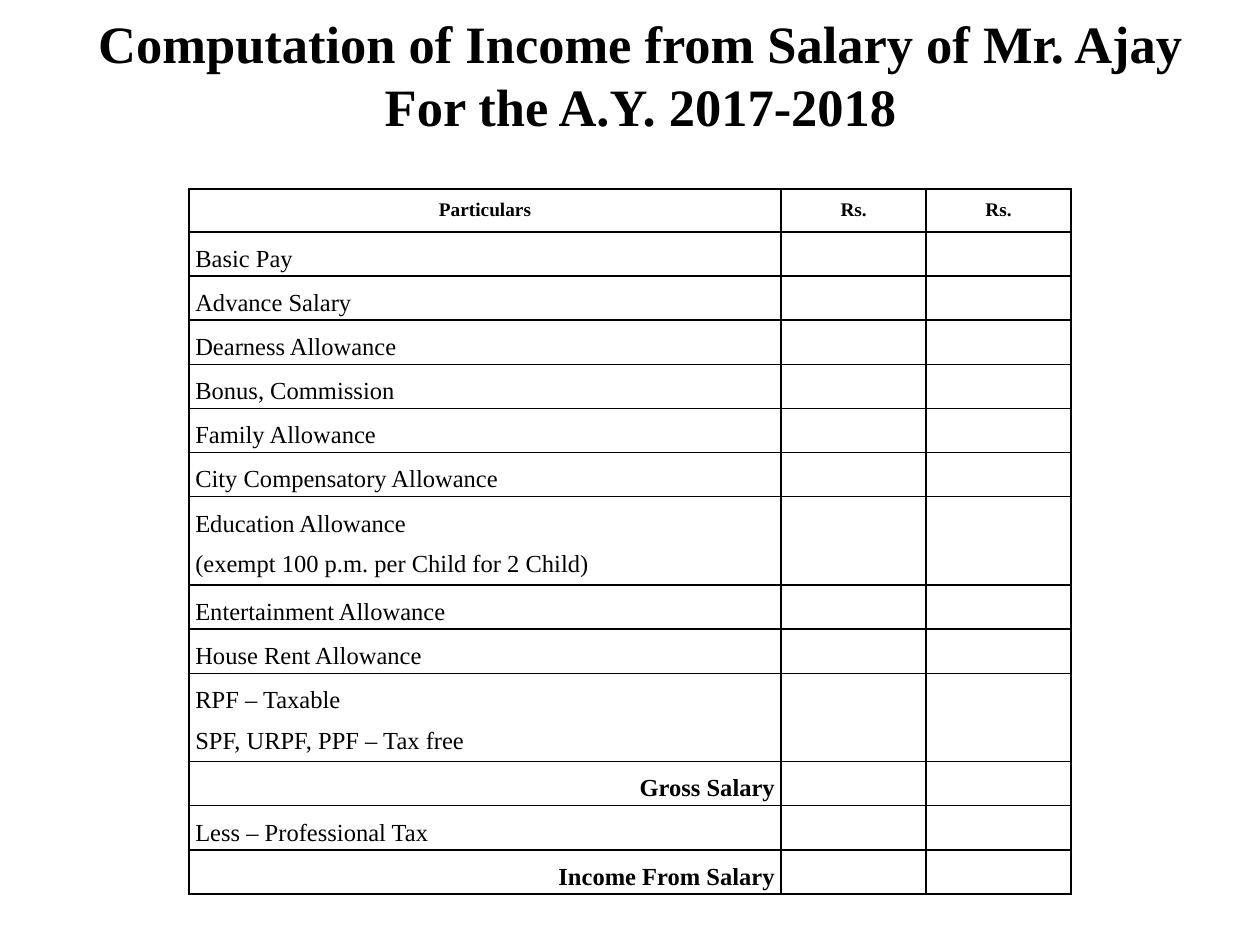
from pptx import Presentation
from pptx.dml.color import RGBColor
from pptx.enum.text import MSO_ANCHOR, PP_ALIGN
from pptx.oxml import parse_xml
from pptx.oxml.ns import nsdecls
from pptx.util import Inches, Pt

LEFT, CENTER, RIGHT = PP_ALIGN.LEFT, PP_ALIGN.CENTER, PP_ALIGN.RIGHT
TOP = MSO_ANCHOR.TOP
FONT = "Times New Roman"
BLACK = "000000"
ROW_HEIGHT = 0.34
TITLE = "Computation of Income from Salary of Mr. Ajay\nFor the A.Y. 2017-2018"
HEADERS = ["Particulars", "Rs.", "Rs."]
PARTICULARS = [
    "Basic Pay",
    "Advance Salary",
    "Dearness Allowance",
    "Bonus, Commission",
    "Family Allowance",
    "City Compensatory Allowance",
    "Education Allowance\n(exempt 100 p.m. per Child for 2 Child)",
    "Entertainment Allowance",
    "House Rent Allowance",
    "RPF – Taxable\nSPF, URPF, PPF – Tax free",
    "Gross Salary",
    "Less – Professional Tax",
    "Income From Salary",
]
TOTALS = {"Gross Salary", "Income From Salary"}


def color(value):
    return RGBColor.from_string(value)


def write(tf, text, size=14, bold=False, align=LEFT, spacing=1.5):
    for i, line in enumerate(text.split("\n")):
        p = tf.paragraphs[0] if i == 0 else tf.add_paragraph()
        p.alignment = align
        p.line_spacing = spacing
        r = p.add_run()
        r.text = line
        r.font.name = FONT
        r.font.size = Pt(size)
        r.font.bold = bold
        r.font.color.rgb = color(BLACK)


class Deck:
    def __init__(self, width, height):
        self.prs = Presentation()
        self.prs.slide_width = Inches(width)
        self.prs.slide_height = Inches(height)
        self.s = self.prs.slides.add_slide(self.prs.slide_layouts[6])

    def box(self, x, y, w, h):
        width, height = self.prs.slide_width, self.prs.slide_height
        return int(x * width), int(y * height), int(w * width), int(h * height)

    def title(self, text, *shares):
        tf = self.s.shapes.add_textbox(*self.box(*shares)).text_frame
        tf.word_wrap = True
        tf.vertical_anchor = TOP
        tf.margin_top = Inches(0.16)
        write(tf, text, size=30, bold=True, align=CENTER, spacing=Pt(36))

    def cell(self, cell, text="", **style):
        cell.margin_left = cell.margin_right = Inches(0.05)
        cell.margin_top = cell.margin_bottom = 0
        tc_pr = cell._tc.get_or_add_tcPr()
        for side in ("lnL", "lnR", "lnT", "lnB"):
            tc_pr.append(parse_xml(
                f'<a:{side} {nsdecls("a")} w="{Pt(1)}"><a:solidFill>'
                f'<a:srgbClr val="{BLACK}"/></a:solidFill></a:{side}>'))
        cell.fill.background()
        if text:
            write(cell.text_frame, text, **style)

    def table(self, headers, items, columns, *shares):
        frame = self.s.shapes.add_table(
            len(items) + 1, len(headers), *self.box(*shares))
        table = frame.table
        table.first_row = table.horz_banding = False
        for column, width in zip(table.columns, columns):
            column.width = Inches(width)
        for row, text in zip(table.rows, [headers[0], *items]):
            row.height = Inches(ROW_HEIGHT * (text.count("\n") + 1))
        for c, text in enumerate(headers):
            self.cell(table.cell(0, c), text, size=11, bold=True, align=CENTER)
        for r, text in enumerate(items, 1):
            total = text in TOTALS
            self.cell(table.cell(r, 0), text, bold=total,
                      align=RIGHT if total else LEFT)
            for c in range(1, len(headers)):
                self.cell(table.cell(r, c))


def main():
    deck = Deck(10, 7.5)
    deck.title(TITLE, 0.067, -0.01, 0.883, 0.244)
    deck.table(HEADERS, PARTICULARS, [4.7, 1.15, 1.15], 0.15, 0.2, 0.7, 0.73)
    deck.prs.save("out.pptx")


if __name__ == "__main__":
    main()
